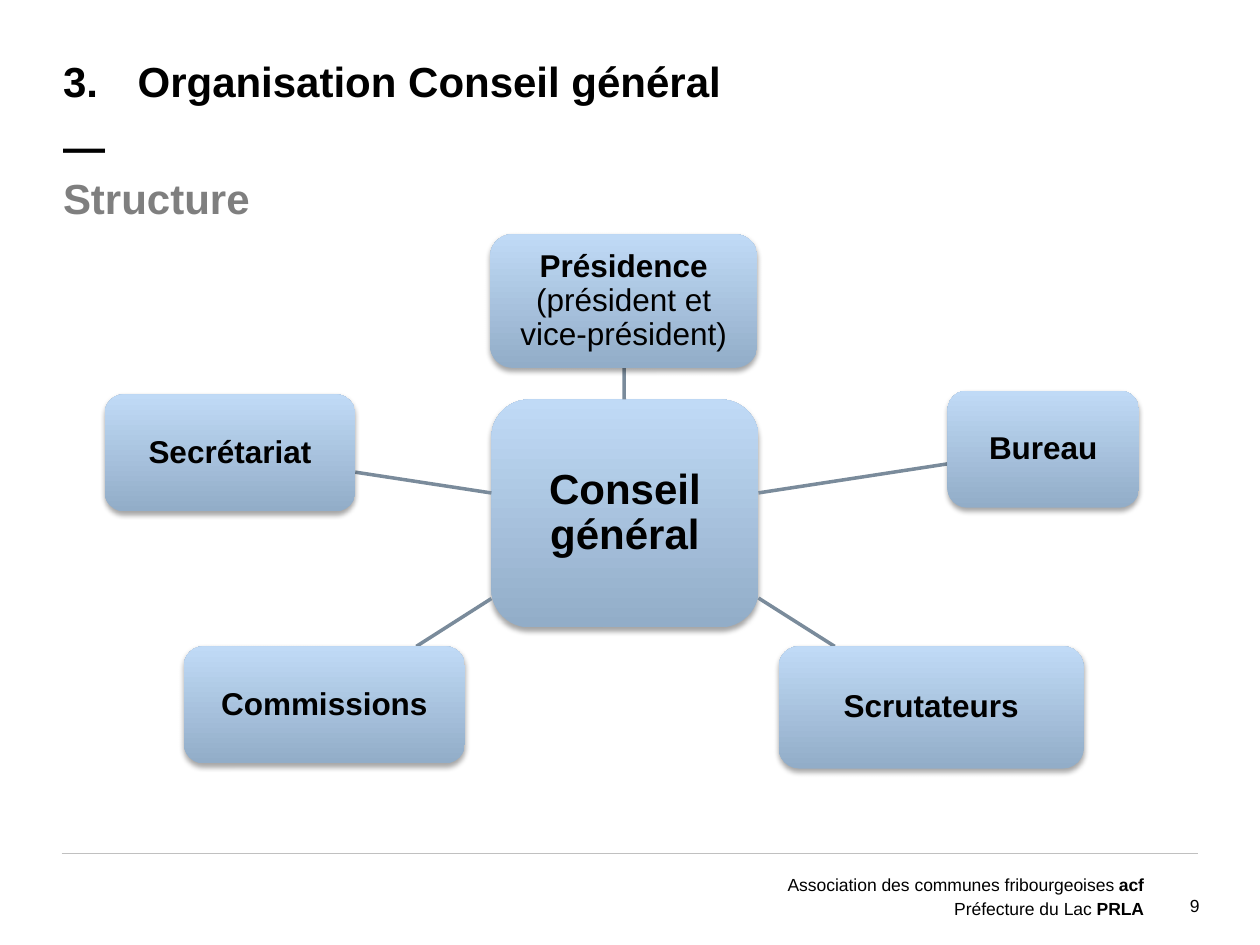
import pptx
import pptx.util
import pptx.dml.color
import pptx.enum.shapes
import pptx.enum.text
import pptx.oxml
import pptx.oxml.ns
import lxml.etree

RGBColor = pptx.dml.color.RGBColor
Pt = pptx.util.Pt
ALIGN = pptx.enum.text.PP_ALIGN
ANCHOR = pptx.enum.text.MSO_ANCHOR

BLACK = RGBColor(0x00, 0x00, 0x00)
GREY = RGBColor(0x7F, 0x7F, 0x7F)
RULE_GREY = RGBColor(0xC0, 0xC0, 0xC0)
BOX_DARK = RGBColor(0x92, 0xAD, 0xC8)
BOX_LIGHT = RGBColor(0xC0, 0xDA, 0xF6)
LINK_BLUE = RGBColor(0x7A, 0x8B, 0x9B)

FONT = "Arial"
COLUMNS, ROWS = 100, 75
CELL = pptx.util.Inches(0.1)  # the grid is square

HUB = (39, 31.7, 21.2, 18.1)
# Box in grid cells, bold text, regular text
SATELLITES = [
    ((38.9, 18.6, 21.2, 10.6), "Présidence", " (président et vice-président)"),
    ((61.8, 51.3, 24.2, 9.7), "Scrutateurs", ""),
    ((75.2, 31, 15.2, 9.3), "Bureau", ""),
    ((8.3, 31.3, 19.9, 9.3), "Secrétariat", ""),
    ((14.6, 51.3, 22.3, 9.3), "Commissions", ""),
]


def grid(*values):
    return [round(value * CELL) for value in values]


def child(parent, tag, **attributes):
    return lxml.etree.SubElement(parent, pptx.oxml.ns.qn(tag), attributes)


def fill_paragraph(paragraph, runs, size, color=BLACK, align=ALIGN.LEFT, spacing=None):
    """Write (text, bold) runs into the paragraph."""
    paragraph.alignment = align
    paragraph.line_spacing = spacing
    font = paragraph.font
    font.name, font.size, font.color.rgb = FONT, Pt(size), color
    for text, bold in runs:
        run = paragraph.add_run()
        run.text = text
        run.font.bold = bold


def set_margins(frame, margin):
    frame.word_wrap = True
    frame.margin_left = frame.margin_right = margin
    frame.margin_top = frame.margin_bottom = margin


def add_text_frame(slide, box):
    frame = slide.shapes.add_textbox(*grid(*box)).text_frame
    set_margins(frame, 0)
    return frame


def add_line(slide, start, end, color, width):
    line = slide.shapes.add_connector(
        pptx.enum.shapes.MSO_CONNECTOR.STRAIGHT, *grid(*start, *end))
    line.line.color.rgb = color
    line.line.width = Pt(width)
    child(line._element.spPr, "a:effectLst")


def add_heading(slide, box):
    left, top, width, height = box
    paragraph = add_text_frame(slide, (left, top, width, 9.8)).paragraphs[0]
    tabs = child(paragraph._p.get_or_add_pPr(), "a:tabLst")
    child(tabs, "a:tab", pos=str(5 * CELL), algn="l")
    fill_paragraph(paragraph, [], 24, spacing=Pt(37))
    paragraph.font.bold = True
    paragraph.add_run().text = "3.\t Organisation Conseil général"
    paragraph.add_line_break()
    paragraph.add_run().text = "—"
    subtitle = add_text_frame(slide, (left, top + height - 4, width, 4))
    fill_paragraph(subtitle.paragraphs[0], [("Structure", True)], 24, GREY)


def add_node(slide, box, runs, size, margin):
    node = slide.shapes.add_shape(
        pptx.enum.shapes.MSO_SHAPE.ROUNDED_RECTANGLE, *grid(*box))
    node.fill.gradient()
    node.fill.gradient_angle = 90
    for stop, color in zip(node.fill.gradient_stops, (BOX_DARK, BOX_LIGHT)):
        stop.color.rgb = color
    node.line.fill.background()
    node.shadow.inherit = False
    effects = node._element.spPr.find(pptx.oxml.ns.qn("a:effectLst"))
    shadow = child(effects, "a:outerShdw", blurRad=str(Pt(3.1)), dist=str(Pt(1.8)),
                   dir="5400000", rotWithShape="0")
    child(child(shadow, "a:srgbClr", val=str(BLACK)), "a:alpha", val="35000")
    frame = node.text_frame
    set_margins(frame, round(margin * CELL))
    frame.vertical_anchor = ANCHOR.MIDDLE
    fill_paragraph(frame.paragraphs[0], runs, size, align=ALIGN.CENTER, spacing=0.9)


def center(box):
    left, top, width, height = box
    return left + width / 2, top + height / 2


def edge_point(box, target):
    """Point where the line from the centre of the box to the target leaves the box."""
    x, y = center(box)
    dx, dy = target[0] - x, target[1] - y
    share = 1 / max(abs(dx) / (box[2] / 2), abs(dy) / (box[3] / 2))
    return x + dx * share, y + dy * share


def add_radial_diagram(slide, hub, satellites):
    add_node(slide, hub, [("Conseil général", True)], 24, 0.7)
    for box, name, detail in satellites:
        add_line(slide, edge_point(hub, center(box)), edge_point(box, center(hub)),
                 LINK_BLUE, 2)
        runs = [(name, True)] + ([(detail, False)] if detail else [])
        add_node(slide, box, runs, 18, 0.5)


def add_footer(slide, box):
    left, top, width, height = box
    right = left + width
    add_line(slide, (left, top), (right, top), RULE_GREY, 0.25)
    frame = add_text_frame(slide, (right - 33.3, top + 1.5, 29, 3.5))
    lines = [("Association des communes fribourgeoises ", "acf"),
             ("Préfecture du Lac ", "PRLA")]
    for index, (name, short) in enumerate(lines):
        paragraph = frame.add_paragraph() if index else frame.paragraphs[0]
        fill_paragraph(paragraph, [(name, False), (short, True)], 10,
                       align=ALIGN.RIGHT, spacing=Pt(13.4))
    number = add_text_frame(slide, (right - 4.3, top + 3.3, 4.4, 1.7))
    fill_paragraph(number.paragraphs[0], [("9", False)], 10, align=ALIGN.RIGHT)


def main():
    presentation = pptx.Presentation()
    presentation.slide_width, presentation.slide_height = grid(COLUMNS, ROWS)
    slide = presentation.slides.add_slide(presentation.slide_layouts[6])
    add_footer(slide, (4.9, 67.7, 90.2, 5))
    add_heading(slide, (5, 3.3, 90.1, 14.4))
    add_radial_diagram(slide, HUB, SATELLITES)
    presentation.save("out.pptx")


if __name__ == "__main__":
    main()
